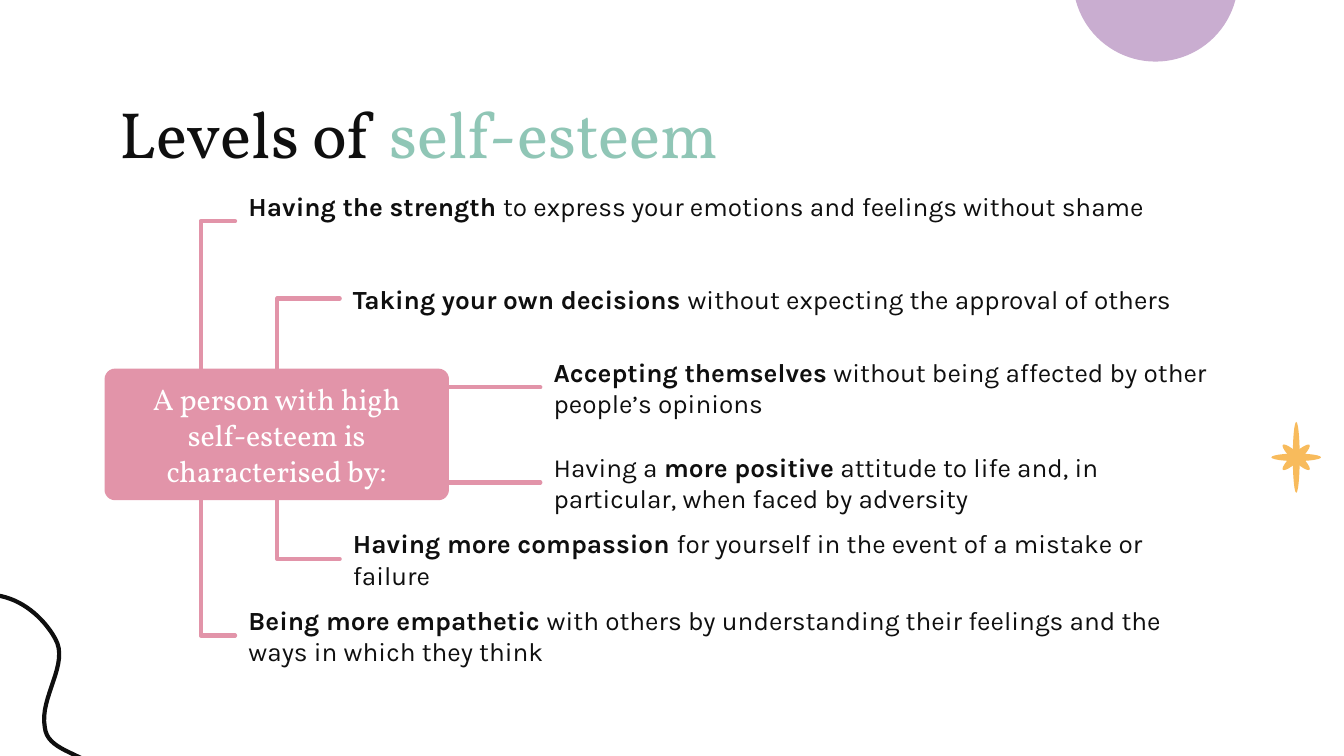
from lxml import etree
from pptx import Presentation
from pptx.dml.color import RGBColor
from pptx.enum.shapes import MSO_CONNECTOR, MSO_SHAPE
from pptx.enum.text import MSO_ANCHOR, MSO_AUTO_SIZE, PP_ALIGN
from pptx.oxml.ns import qn
from pptx.util import Pt

ELBOW = MSO_CONNECTOR.ELBOW
OVAL = MSO_SHAPE.OVAL
ROUNDED = MSO_SHAPE.ROUNDED_RECTANGLE
TOP, MIDDLE = MSO_ANCHOR.TOP, MSO_ANCHOR.MIDDLE
LEFT, CENTER = PP_ALIGN.LEFT, PP_ALIGN.CENTER

COLORS = {
    "ink": "0F0F0F",
    "white": "FFFFFF",
    "pink": "E294A9",
    "green": "90C6B6",
    "lilac": "C9ADD0",
    "orange": "F8BB5C",
}
HEADING_FONT, BODY_FONT = "Vollkorn", "Karla"
INSET = 7.2
TRAIT_RIGHT = 664
HUB_Y = 232.5

OUTER = {"left": 126, "start": 145.5, "bend": 107.5}
INNER = {"left": 182, "start": 148.5, "bend": 148.5}
SIDE = {"left": 289.5, "start": 151, "bend": 220.25}

# level, text top, text height, branch end, runs as (text, bold)
TRAITS = [
    (OUTER, 94.6, 32, 118.5, [
        ("Having the strength ", True),
        ("to express your emotions and feelings without shame", False)]),
    (INNER, 144, 32, 160, [
        ("Taking your own decisions ", True),
        ("without expecting the approval of others", False)]),
    (SIDE, 185.5, 44, 207.5, [
        ("Accepting themselves", True),
        (" without being affected by other people’s opinions", False)]),
    (SIDE, 236.5, 44, 258.5, [
        ("Having a ", False),
        ("more positive", True),
        (" attitude to life and, in particular, when faced by adversity", False)]),
    (INNER, 283.5, 32, 299.5, [
        ("Having more compassion ", True),
        ("for yourself in the event of a mistake or failure", False)]),
    (OUTER, 318.5, 44, 340.5, [
        ("Being more empathetic ", True),
        ("with others by understanding their feelings and the ways in which they think", False)]),
]

SQUIGGLE_START = (-26.5, 320.5)
SQUIGGLE_CURVES = [
    [(-18, 320.5), (-9.5, 317.5), (-1.5, 319)],
    [(11.5, 321), (23, 330.5), (29.5, 342)],
    [(37.5, 355.5), (21, 373.5), (24, 389.5)],
    [(25, 402), (43, 403), (52, 412)],
    [(58.5, 419), (58.5, 437), (50.5, 442)],
]


def rgb(name):
    return RGBColor.from_string(COLORS[name])


def style_font(font, family, size, color):
    font.name = family
    font.size = Pt(size)
    font.color.rgb = rgb(color)


def set_frame(frame, anchor):
    frame.word_wrap = True
    frame.auto_size = MSO_AUTO_SIZE.NONE
    frame.vertical_anchor = anchor
    frame.margin_left = frame.margin_right = Pt(INSET)
    frame.margin_top = frame.margin_bottom = Pt(INSET)


def add_filled(shapes, kind, left, top, width, height, color):
    shape = shapes.add_shape(kind, Pt(left), Pt(top), Pt(width), Pt(height))
    shape.shadow.inherit = False
    shape.fill.solid()
    shape.fill.fore_color.rgb = rgb(color)
    shape.line.fill.background()
    return shape


def add_star(slide, x, y):
    group = slide.shapes.add_group_shape()
    for width, height, angle in [(3.7, 38, 0), (26.6, 4, 0), (19.5, 4.5, 43), (19.5, 4.5, -43)]:
        petal = add_filled(group.shapes, OVAL, x - width / 2, y - height / 2, width, height, "orange")
        petal.rotation = angle


def cubic(a, b, c, d, t):
    s = 1 - t
    return s**3 * a + 3 * s * s * t * b + 3 * s * t * t * c + t**3 * d


def add_squiggle(slide, steps=16):
    points = []
    start = SQUIGGLE_START
    for first, second, end in SQUIGGLE_CURVES:
        for step in range(1, steps + 1):
            points.append(tuple(
                Pt(cubic(*axis, step / steps)) for axis in zip(start, first, second, end)))
        start = end
    builder = slide.shapes.build_freeform(*map(Pt, SQUIGGLE_START))
    builder.add_line_segments(points, close=False)
    squiggle = builder.convert_to_shape()
    squiggle.shadow.inherit = False
    squiggle.fill.background()
    squiggle.line.color.rgb = rgb("ink")
    squiggle.line.width = Pt(2.25)


def add_branch(slide, level, end_y):
    start, end, bend = level["start"], level["left"], level["bend"]
    branch = slide.shapes.add_connector(ELBOW, Pt(start), Pt(HUB_Y), Pt(end), Pt(end_y))
    branch.line.color.rgb = rgb("pink")
    branch.line.width = Pt(2.25)
    properties = branch._element.spPr
    properties.find(qn("a:ln")).set("cap", "rnd")
    etree.SubElement(properties, qn("a:effectLst"))
    ratio = round((bend - start) / (end - start) * 100000)
    adjustments = properties.find(qn("a:prstGeom")).find(qn("a:avLst"))
    etree.SubElement(adjustments, qn("a:gd"), name="adj1", fmla=f"val {ratio}")


def add_trait(slide, left, top, height, runs):
    box = slide.shapes.add_textbox(Pt(left), Pt(top), Pt(TRAIT_RIGHT - left), Pt(height))
    set_frame(box.text_frame, MIDDLE)
    paragraph = box.text_frame.paragraphs[0]
    style_font(paragraph.font, BODY_FONT, 14, "ink")
    for text, bold in runs:
        run = paragraph.add_run()
        run.text = text
        run.font.bold = bold


def add_title(slide):
    title = slide.shapes.title
    title.left, title.top, title.width, title.height = Pt(57), Pt(42.5), Pt(607), Pt(62.5)
    set_frame(title.text_frame, TOP)
    paragraph = title.text_frame.paragraphs[0]
    paragraph.alignment = LEFT
    for text, color in [("Levels of ", "ink"), ("self-esteem", "green")]:
        run = paragraph.add_run()
        run.text = text
        style_font(run.font, HEADING_FONT, 35, color)


def add_hub(slide):
    hub = add_filled(slide.shapes, ROUNDED, 56, 197.5, 184.5, 70.5, "pink")
    hub.adjustments[0] = 0.08
    set_frame(hub.text_frame, MIDDLE)
    paragraph = hub.text_frame.paragraphs[0]
    paragraph.text = "A person with high self-esteem is characterised by:"
    paragraph.alignment = CENTER
    style_font(paragraph.font, HEADING_FONT, 16, "white")


def main():
    presentation = Presentation()
    presentation.slide_width, presentation.slide_height = Pt(720), Pt(405)
    slide = presentation.slides.add_slide(presentation.slide_layouts[5])
    add_star(slide, 694.4, 245)
    add_filled(slide.shapes, OVAL, 574.8, -55.5, 88.5, 88.5, "lilac")
    add_squiggle(slide)
    for level, _, _, end_y, _ in TRAITS:
        add_branch(slide, level, end_y)
    add_title(slide)
    add_hub(slide)
    for level, top, height, _, runs in TRAITS:
        add_trait(slide, level["left"], top, height, runs)
    presentation.save("out.pptx")


if __name__ == "__main__":
    main()
